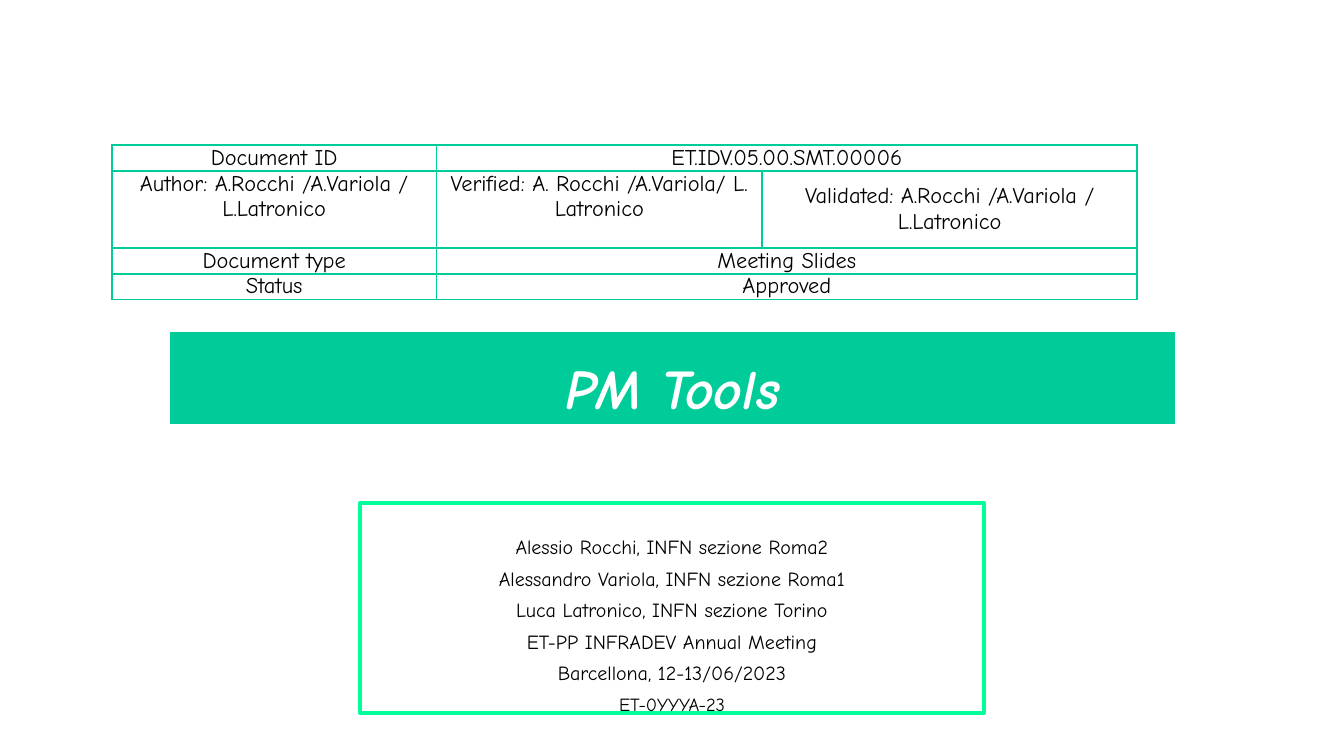
from dataclasses import dataclass
from lxml.etree import SubElement
from pptx import Presentation
from pptx.dml.color import RGBColor as RGB
from pptx.enum.text import MSO_ANCHOR as Anchor, MSO_AUTO_SIZE as AutoSize, PP_ALIGN as Align
from pptx.oxml.ns import qn
from pptx.util import Inches, Pt


@dataclass(frozen=True)
class Theme:
    font: str = "Comic Neue"
    green: str = "00CC99"
    bright: str = "00FF99"
    white: str = "FFFFFF"
    black: str = "000000"
    title: float = 40
    cell: float = 16
    author: float = 14.3
    code: float = 13.2
    border: float = 1.5
    outline: float = 3


theme = Theme()


def style(paragraph, size, color):
    paragraph.alignment = Align.CENTER
    paragraph.font.name = theme.font
    paragraph.font.size = Pt(size)
    paragraph.font.color.rgb = RGB.from_string(color)


def place(holder, left, top, width, height, line):
    holder.left, holder.top = Inches(left), Inches(top)
    holder.width, holder.height = Inches(width), Inches(height)
    holder.line.color.rgb = RGB.from_string(line)
    holder.line.width = Pt(theme.outline)
    holder.text_frame.word_wrap = True
    holder.text_frame.auto_size = AutoSize.NONE


deck = Presentation()
deck.slide_width, deck.slide_height = Inches(13.33), Inches(7.5)
slide = deck.slides.add_slide(deck.slide_layouts[0])

title = slide.shapes.title
place(title, 1.67, 3.27, 10, 0.96, theme.white)
title.fill.solid()
title.fill.fore_color.rgb = RGB.from_string(theme.green)
title.text_frame.vertical_anchor = Anchor.BOTTOM
title.text_frame.text = "PM Tools"
heading = title.text_frame.paragraphs[0]
style(heading, theme.title, theme.white)
heading.line_spacing = 0.9
heading.font.bold = heading.font.italic = True

records = [
    ["Document ID", "ET.IDV.05.00.SMT.00006"],
    ["Author: A.Rocchi /A.Variola / L.Latronico",
     "Verified: A. Rocchi /A.Variola/ L. Latronico",
     "Validated: A.Rocchi /A.Variola / L.Latronico"],
    ["Document type", "Meeting Slides"],
    ["Status", "Approved"],
]
column_widths = [3.22, 3.23, 3.72]
line_height = 0.255
row_lines = [1, 3, 1, 1]
register = slide.shapes.add_table(
    len(records), len(column_widths), Inches(1.11), Inches(1.44),
    Inches(sum(column_widths)), Inches(line_height * sum(row_lines))).table
register.first_row = register.horz_banding = False
for column, width in zip(register.columns, column_widths):
    column.width = Inches(width)
for row, lines in zip(register.rows, row_lines):
    row.height = Inches(line_height * lines)

for cell in register.iter_cells():
    cell.margin_left = cell.margin_right = Inches(0.07)
    cell.margin_top = cell.margin_bottom = 0
    cell.vertical_anchor = Anchor.MIDDLE
    properties = cell._tc.get_or_add_tcPr()
    for side in ("a:lnL", "a:lnR", "a:lnT", "a:lnB"):
        border = SubElement(properties, qn(side), w=str(Pt(theme.border)))
        SubElement(SubElement(border, qn("a:solidFill")), qn("a:srgbClr"), val=theme.green)
    cell.fill.background()
    style(cell.text_frame.paragraphs[0], theme.cell, theme.black)

for r, record in enumerate(records):
    if len(record) == 2:
        register.cell(r, 1).merge(register.cell(r, 2))
    for c, entry in enumerate(record):
        cell = register.cell(r, c)
        cell.text = entry
        style(cell.text_frame.paragraphs[0], theme.cell, theme.black)
for c in (0, 1):
    register.cell(1, c).vertical_anchor = Anchor.TOP

authors = slide.placeholders[1]
place(authors, 3.57, 4.99, 6.19, 2.08, theme.bright)
authors.fill.background()
authors.text_frame.margin_top = Inches(0.38)
authors.text_frame.vertical_anchor = Anchor.TOP
authors.text_frame.text = "\n".join([
    "Alessio Rocchi, INFN sezione Roma2",
    "Alessandro Variola, INFN sezione Roma1",
    "Luca Latronico, INFN sezione Torino",
    "ET-PP INFRADEV Annual Meeting",
    "Barcellona, 12-13/06/2023",
    "ET-0YYYA-23",
])
for i, paragraph in enumerate(authors.text_frame.paragraphs):
    style(paragraph, theme.author, theme.black)
    paragraph.line_spacing = 0.7
    paragraph.space_before = Pt(10.5 if i else 0)
paragraph.font.size = Pt(theme.code)

deck.save("out.pptx")
